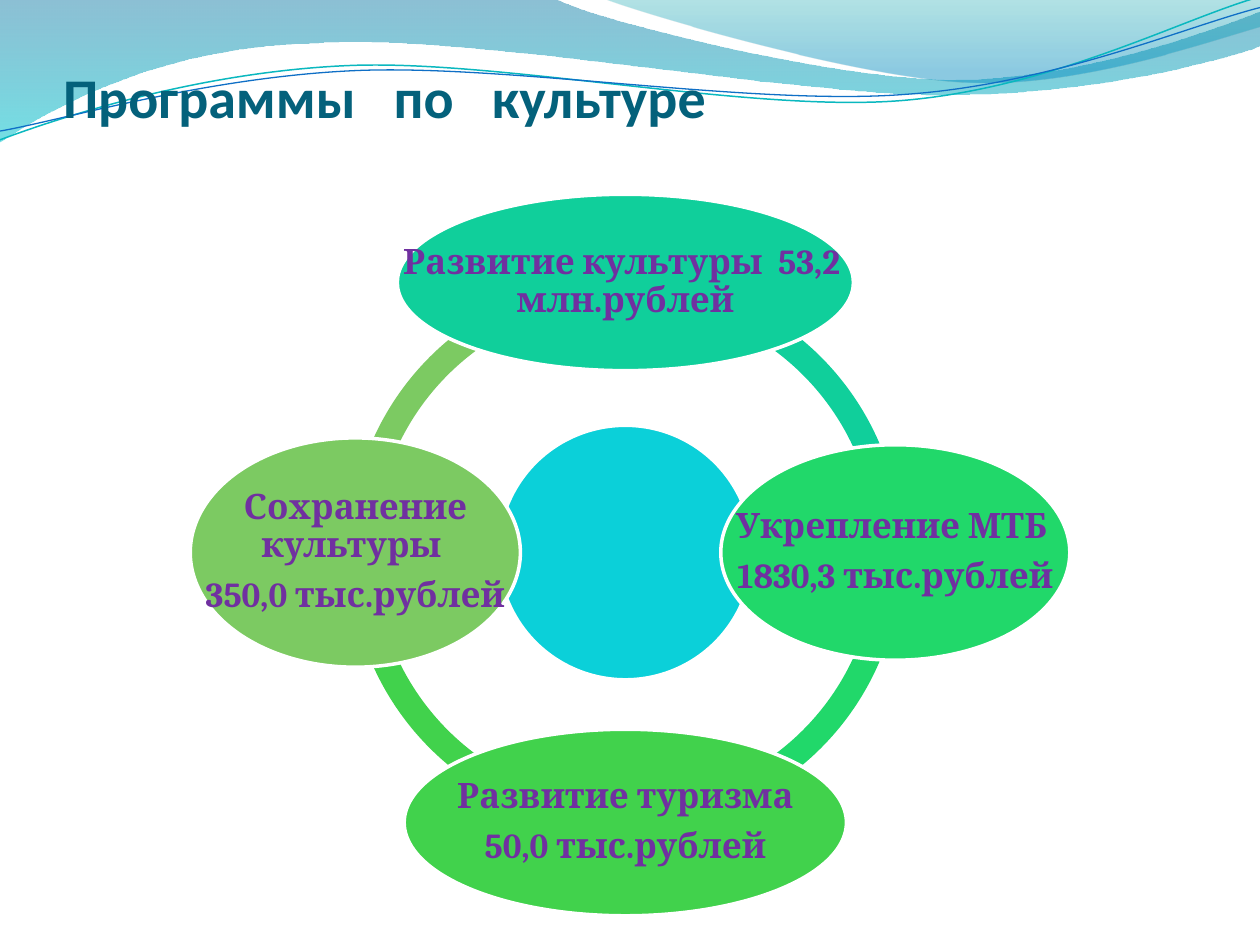
from math import cos, sin, radians
from lxml.etree import SubElement
from pptx import Presentation
from pptx.dml.color import RGBColor as RGB
from pptx.enum.shapes import MSO_SHAPE as Kind
from pptx.enum.text import MSO_ANCHOR as Anchor, PP_ALIGN as Align
from pptx.oxml.ns import qn
from pptx.util import Inches, Pt

COLS, ROWS = 100, 75
TILT = 357.3  # degrees, for the thin curves


def hue(code):
    return RGB.from_string(code)


def pairs(part):
    return list(zip(part[::2], part[1::2]))


def spin(part, mid, deg):
    """Turn every point of a path part around a middle point."""
    c, s = cos(radians(deg)), sin(radians(deg))
    flat = []
    for x, y in pairs(part):
        dx, dy = x - mid[0], y - mid[1]
        flat += [mid[0] + dx * c - dy * s, mid[1] + dx * s + dy * c]
    return flat


class Deck:
    head, body = "Calibri", "Cambria"
    ink, text, white = "04617B", "7030A0", "FFFFFF"

    def __init__(self):
        self.prs = Presentation()
        self.prs.slide_width, self.prs.slide_height = Inches(10), Inches(7.5)
        self.slide = self.prs.slides.add_slide(self.prs.slide_layouts[5])
        self.shapes = self.slide.shapes

    def x(self, col):
        return round(self.prs.slide_width * col / COLS)

    def y(self, row):
        return round(self.prs.slide_height * row / ROWS)

    def box(self, mid, size):
        """Frame of the given size around a middle point."""
        (cx, cy), (w, h) = mid, size
        return self.x(cx - w / 2), self.y(cy - h / 2), self.x(w), self.y(h)

    def free(self, path, close):
        """Outline of points (2 numbers) and cubic curves (6 numbers)."""
        pts = [(self.x(c), self.y(r)) for part in path for c, r in pairs(part)]
        pen = self.shapes.build_freeform(*pts[0])
        pen.add_line_segments(pts[1:], close=close)
        shape = pen.convert_to_shape()
        shape.shadow.inherit = False
        # Join three straight pieces into each cubic curve
        legs = iter(list(shape._element.iter(qn("a:lnTo"))))
        for part in path[1:]:
            first = next(legs)
            if len(part) == 6:
                first.tag = qn("a:cubicBezTo")
                for leg in (next(legs), next(legs)):
                    first.append(leg[0])
                    leg.getparent().remove(leg)
        return shape

    def wave(self, path, stops):
        shape = self.free(path, True)
        shape.line.fill.background()
        shape.fill.gradient()
        shape.fill.gradient_angle = 270
        for stop, (pos, code, alpha) in zip(shape.fill.gradient_stops, stops):
            stop.position, stop.color.rgb = pos, hue(code)
            node = stop.color._xFill.find(qn("a:srgbClr"))
            SubElement(node, qn("a:alpha")).set("val", str(alpha * 1000))

    def curve(self, path, mid, code, width):
        shape = self.free([spin(part, mid, -TILT) for part in path], False)
        shape.rotation = TILT
        shape.fill.background()
        shape.line.color.rgb, shape.line.width = hue(code), Pt(width)

    def title(self, text, frame):
        shape = self.shapes.title
        self.shapes._spTree.append(shape._element)  # in front of the waves
        left, top, wide, high = frame
        shape.left, shape.top = self.x(left), self.y(top)
        shape.width, shape.height = self.x(wide), self.y(high)
        tf = shape.text_frame
        tf.text, tf.vertical_anchor = text, Anchor.BOTTOM
        tf.margin_left = tf.margin_right = tf.margin_bottom = 0
        para = tf.paragraphs[0]
        para.alignment = Align.LEFT
        self.style(para.font, self.head, 32, self.ink)

    def style(self, font, name, size, code):
        font.name, font.size, font.bold = name, Pt(size), True
        font.color.rgb = hue(code)

    def solid(self, kind, mid, size, code):
        shape = self.shapes.add_shape(kind, *self.box(mid, size))
        shape.shadow.inherit = False
        shape.fill.solid()
        shape.fill.fore_color.rgb = hue(code)
        return shape

    def arc(self, mid, size, start, code):
        shape = self.solid(Kind.BLOCK_ARC, mid, (size, size), code)
        shape.line.fill.background()
        for i, val in enumerate((start * 0.6, (start + 90) % 360 * 0.6, 0.046)):
            shape.adjustments[i] = val

    def oval(self, mid, size, code):
        shape = self.solid(Kind.OVAL, mid, size, code)
        shape.line.color.rgb, shape.line.width = hue(self.white), Pt(2)

    def label(self, mid, size, lines):
        tf = self.shapes.add_textbox(*self.box(mid, size)).text_frame
        tf.word_wrap, tf.vertical_anchor = True, Anchor.MIDDLE
        tf.margin_left = tf.margin_right = Inches(0.03)
        tf.margin_top = tf.margin_bottom = Inches(0.03)
        tf.text = "\n".join(lines)
        for para in tf.paragraphs:
            para.alignment, para.line_spacing = Align.CENTER, 0.9
            para.space_after = Pt(7)
            self.style(para.font, self.body, 20, self.text)


def main():
    deck = Deck()

    # Waves along the top
    deck.wave([(0, 0), (44, -0.1), (47.6, 1.7, 66.4, 6.3, 75.8, 6.3),
               (85.3, 6.3, 95.8, 2.6, 100, 0.9), (100.1, 3.6),
               (98.3, 4.4, 87, 7.6, 74.6, 7.5), (62.2, 7.5, 38.2, 2.8, 25.7, 3.4),
               (12.9, 3.6, 4.6, 8.3, -0.1, 11.3)],
              [(0, "0074A1", 45), (1, "00C6CF", 55)])
    deck.wave([(47.9, -0.1), (50.9, 1.1, 68.2, 6.2, 76.9, 6.5),
               (85.6, 6.9, 96.1, 3.2, 100, 2.1), (100, 0)],
              [(0, "00A1A9", 30), (0.8, "008BBF", 45)])
    deck.curve([(0, 11.1), (4.8, 9.3, 15.8, 5.7, 27.7, 5.2),
                (39.5, 4.7, 59.3, 8.9, 71.3, 8), (83.3, 7.1, 93.8, 1.5, 99.8, -0.2)],
               (49.9, 5.75), "0AB8BF", 0.85)
    deck.curve([(0, 10.4), (4.7, 9.6, 16.4, 6.1, 28.3, 5.6),
                (40.3, 5.1, 59.7, 8.4, 71.7, 7.5), (83.6, 6.7, 94.1, 2.1, 100, 0.6)],
               (49.95, 5.9), "0F6FC6", 0.75)

    deck.title("Программы   по   культуре", (5, 3, 90, 7.3))

    # Programmes, clockwise from the top of the ring
    items = [
        ("10CF9B", (36.2, 14), ["Развитие культуры  53,2  млн.рублей"]),
        ("21D86A", (27.7, 17.1), ["Укрепление МТБ ", "1830,3 тыс.рублей"]),
        ("41D24C", (35.1, 14.8), ["Развитие туризма", "50,0 тыс.рублей"]),
        ("7CCA62", (26.2, 18.2), ["Сохранение культуры ", "350,0 тыс.рублей"]),
    ]
    hub, reach = (49.63, 43.85), 21.43
    turns = [270, 0, 90, 180]

    # Ring and hub, last arc at the back
    for turn, (code, _, _) in reversed(list(zip(turns, items))):
        deck.arc(hub, 43.9, turn, code)
    deck.oval(hub, (20.2, 20.2), "0BD0D9")

    # Ovals with labels
    for turn, (code, size, lines) in zip(turns, items):
        ang = radians(turn)
        mid = hub[0] + reach * cos(ang), hub[1] + reach * sin(ang)
        deck.oval(mid, size, code)
        deck.label(mid, size, lines)

    deck.prs.save("out.pptx")


if __name__ == "__main__":
    main()
